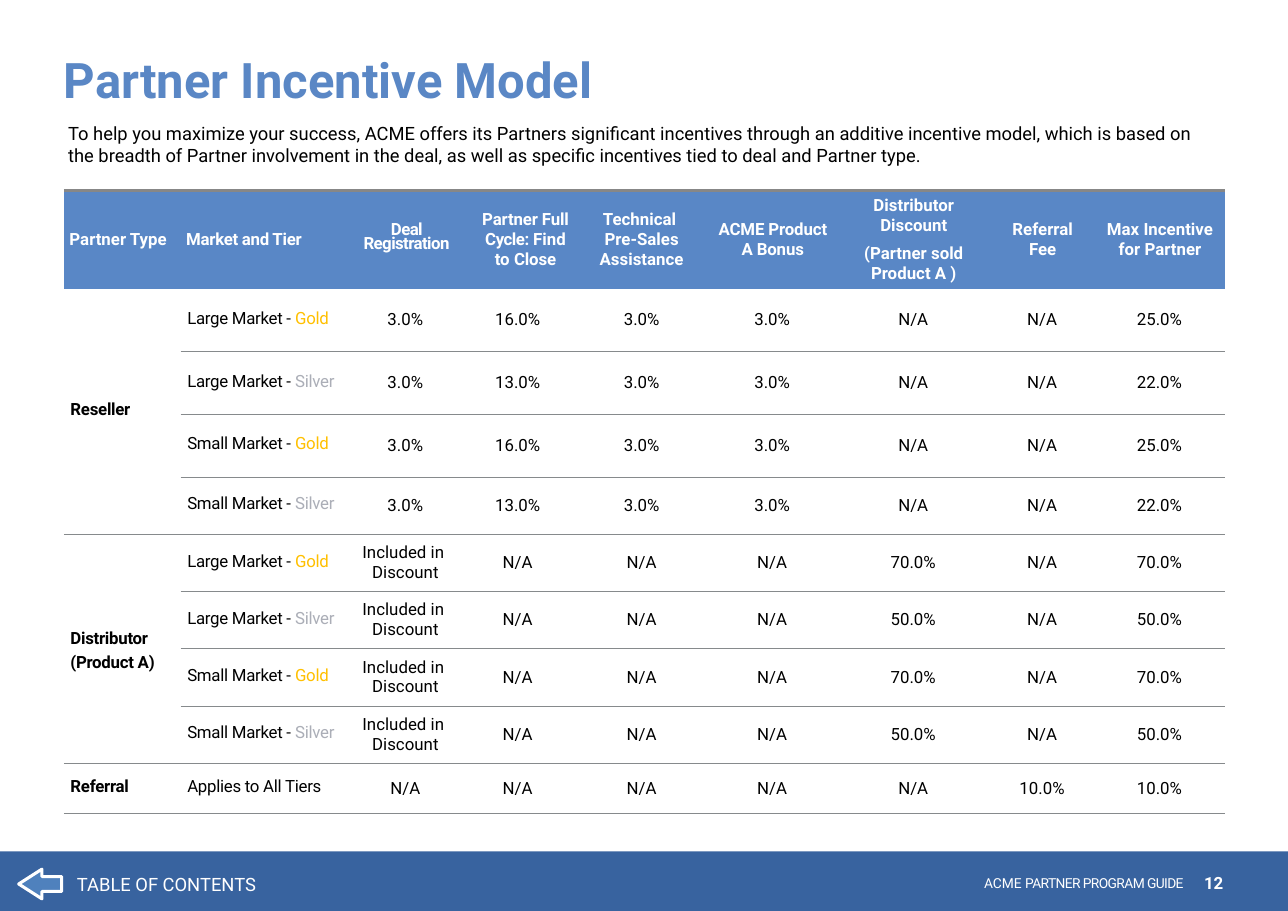
from itertools import product

from lxml.etree import SubElement
from pptx import Presentation
from pptx.dml.color import RGBColor
from pptx.enum.shapes import MSO_SHAPE
from pptx.enum.text import MSO_ANCHOR, PP_ALIGN
from pptx.oxml import parse_xml
from pptx.oxml.ns import nsdecls, qn
from pptx.util import Emu, Pt

SCALE = 9144  # EMU in one px, 100 px to the inch
FONT = "Roboto"
WHITE, BLACK, HEADER_BLUE, RULE_GREY = "FFFFFF", "000000", "5987C6", "868A8C"
TIER_COLORS = {"Gold": "FFC000", "Silver": "ABAEB7"}
NO_STYLE = "{2D5ABB26-0587-4C30-8999-92F81FD0307C}"

COLUMN_WIDTHS = [106, 154, 100, 104, 121, 116, 140, 94, 119]
ROW_HEIGHTS = [85] + [57] * 3 + [52] * 5 + [46]
CENTER = {"alignment": PP_ALIGN.CENTER}
LABEL = {"line_spacing": Pt(11)}

# Each heading: paragraphs of (text, letter spacing) runs, left indent, format
HEADINGS = [
    ([[("Partner Type", 0)]], 0, {}),
    ([[("Market and Tier", -20)]], 0, {}),
    ([[("Deal Registration", -40)]], 2, {**CENTER, "line_spacing": Pt(8.8)}),
    ([[("Partner Full ", -10), ("Cycle: ", -30), ("Find to ", 0), ("Close", -10)]],
     14, CENTER),
    ([[("Technical \nPre-Sales Assistance", 0)]], 0, CENTER),
    ([[("ACME Product A Bonus", -10)]], 1, CENTER),
    ([[("Distributor Discount", 0)], [("(Partner sold Product A )", 0)]],
     1, {**CENTER, "space_before": Pt(5.5)}),
    ([[("Referral", 0)], [("Fee", 0)]], 1, CENTER),
    ([[("Max Incentive for Partner", 0)]], 1, CENTER),
]
NONE, INCLUDED = "N/A", "Included in \nDiscount"
INCENTIVES = {
    "Reseller": {
        "Gold": ["3.0%", "16.0%", "3.0%", "3.0%", NONE, NONE, "25.0%"],
        "Silver": ["3.0%", "13.0%", "3.0%", "3.0%", NONE, NONE, "22.0%"],
    },
    "Distributor (Product A)": {
        "Gold": [INCLUDED, NONE, NONE, NONE, "70.0%", NONE, "70.0%"],
        "Silver": [INCLUDED, NONE, NONE, NONE, "50.0%", NONE, "50.0%"],
    },
}
REFERRAL = [NONE] * 5 + ["10.0%"] * 2


def px(length):
    return Emu(length * SCALE)


def color(value):
    return RGBColor.from_string(value)


def apply(target, values):
    for name, value in values.items():
        setattr(target, name, value)


def add_span(para, text, size, ink, bold=False, spacing=0):
    for index, line in enumerate(text.split("\n")):
        if index:
            para.add_line_break()
        span = para.add_run()
        span.text = line
        apply(span.font, {"name": FONT, "size": Pt(size), "bold": bold})
        span.font.color.rgb = color(ink)
        if spacing:
            span.font._element.set("spc", str(spacing))


def format_para(para, indent, values):
    if indent:
        para._p.get_or_add_pPr().set("marL", str(px(indent)))
    apply(para, values)


def set_margins(target, left, top):
    apply(target, {"margin_left": px(left), "margin_right": px(left),
                   "margin_top": px(top), "margin_bottom": px(top)})


def add_text(page, place, spans, indent=0, margins=(0, 0), **values):
    box = page.shapes.add_textbox(*map(px, place))
    box.text_frame.word_wrap = True
    set_margins(box.text_frame, *margins)
    para = box.text_frame.paragraphs[0]
    format_para(para, indent, values)
    for span in spans:
        add_span(para, *span)


def add_block(page, kind, place, fill, line=None):
    block = page.shapes.add_shape(kind, *map(px, place))
    block.shadow.inherit = False
    block.fill.solid()
    block.fill.fore_color.rgb = color(fill)
    if line:
        block.line.color.rgb = color(line)
        block.line.width = Pt(2)
    else:
        block.line.fill.background()
    return block


def set_borders(cell, **borders):
    """Draw the given sides (T, B) as (color, points); leave the others empty."""
    properties = cell._tc.get_or_add_tcPr()
    for index, side in enumerate("LRTB"):
        edge = parse_xml(f"<a:ln{side} {nsdecls('a')}/>")
        if side in borders:
            ink, width = borders[side]
            edge.set("w", str(Pt(width)))
            fill = SubElement(edge, qn("a:solidFill"))
            SubElement(fill, qn("a:srgbClr")).set("val", ink)
        else:
            SubElement(edge, qn("a:noFill"))
        properties.insert(index, edge)


def fill_cell(cell, spans, indent=0, values=CENTER):
    para = cell.text_frame.paragraphs[0]
    format_para(para, indent, values)
    for span in spans:
        add_span(para, *span)


def fill_header(table):
    for cell, (paragraphs, indent, values) in zip(table.rows[0].cells, HEADINGS):
        cell.vertical_anchor = MSO_ANCHOR.MIDDLE
        set_margins(cell, 5, 5)
        cell.fill.solid()
        cell.fill.fore_color.rgb = color(HEADER_BLUE)
        set_borders(cell, T=("878787", 2.25))
        for index, runs in enumerate(paragraphs):
            frame = cell.text_frame
            para = frame.add_paragraph() if index else frame.paragraphs[0]
            format_para(para, indent, values)
            if not index:
                para.space_before = None
            for text, spacing in runs:
                add_span(para, text, 11, WHITE, True, spacing)


def fill_row(table, row, label, rates):
    fill_cell(table.cell(row, 1), label, 6, LABEL)
    for column, rate in enumerate(rates, 2):
        fill_cell(table.cell(row, column), [(rate, 11, BLACK)])


def add_incentive_table(page):
    place = (58, 173, sum(COLUMN_WIDTHS), sum(ROW_HEIGHTS))
    table = page.shapes.add_table(len(ROW_HEIGHTS), len(COLUMN_WIDTHS),
                                  *map(px, place)).table
    apply(table, {"first_row": False, "horz_banding": False})
    table._tbl.tblPr.find(qn("a:tableStyleId")).text = NO_STYLE
    for column, width in zip(table.columns, COLUMN_WIDTHS):
        column.width = px(width)
    for row, height in zip(table.rows, ROW_HEIGHTS):
        row.height = px(height)
    fill_header(table)

    # Body cells: a rule below each row, and below each whole partner type
    for row, column in product(range(1, len(ROW_HEIGHTS)), range(len(COLUMN_WIDTHS))):
        cell = table.cell(row, column)
        cell.vertical_anchor = MSO_ANCHOR.MIDDLE
        set_margins(cell, 0, 0)
        cell.fill.background()
        ruled = column or row in (1, 4, 5, 8, 9)
        set_borders(cell, **({"B": (RULE_GREY, 0.5)} if ruled else {}))

    # Partner types with four market and tier rows each
    for group, (partner, rates) in enumerate(INCENTIVES.items()):
        first = 1 + 4 * group
        table.cell(first, 0).merge(table.cell(first + 3, 0))
        spacing = {"line_spacing": 1.2} if group else LABEL
        fill_cell(table.cell(first, 0), [(partner, 11, BLACK, True, -20)], 6, spacing)
        for row, (market, tier) in enumerate(product(("Large", "Small"), rates), first):
            label = [(f"{market} Market - ", 11, BLACK, False, -20),
                     (tier, 11, TIER_COLORS[tier], False, -20)]
            fill_row(table, row, label, rates[tier])

    # Referral row
    fill_cell(table.cell(9, 0), [("Referral", 11, BLACK, True, -20)], 6, LABEL)
    fill_row(table, 9, [("Applies to All Tiers", 11, BLACK, False, -20)], REFERRAL)


def main():
    deck = Presentation()
    apply(deck, {"slide_width": px(1169), "slide_height": px(827)})
    page = deck.slides.add_slide(deck.slide_layouts[6])

    # Footer band
    add_block(page, MSO_SHAPE.RECTANGLE, (0, 773, 1169, 54), "38639F")

    # Incentive table, title and introduction
    add_incentive_table(page)
    add_text(page, (55, 44, 1060, 55),
             [("Partner Incentive Model", 32, "5A87C5", True)], 3, (0, 1))
    add_text(page, (52, 106, 1059, 50), [(
        "To help you maximize your success, ACME offers its Partners significant "
        "incentives through an additive incentive model, which is based on the breadth "
        "of Partner involvement in the deal, as well as specific incentives tied to "
        "deal and Partner type.", 12, BLACK)], margins=(10, 5))

    # Footer text and back arrow
    add_text(page, (1089, 795, 27, 16), [("12", 11, WHITE, True, -20)], 4,
             line_spacing=Pt(11.2))
    add_text(page, (784, 796, 290, 13),
             [("ACME ", 9, WHITE), ("PARTNER PROGRAM GUIDE", 9, WHITE, False, -40)], 1,
             alignment=PP_ALIGN.RIGHT, line_spacing=Pt(9.3))
    add_text(page, (60, 788, 222, 30), [("TABLE OF CONTENTS", 12, WHITE)],
             margins=(10, 5))
    arrow = add_block(page, MSO_SHAPE.RIGHT_ARROW, (17, 789, 39, 27), "4F81BD", WHITE)
    arrow.rotation = 180
    arrow.adjustments[1] = 0.78

    deck.save("out.pptx")


if __name__ == "__main__":
    main()
